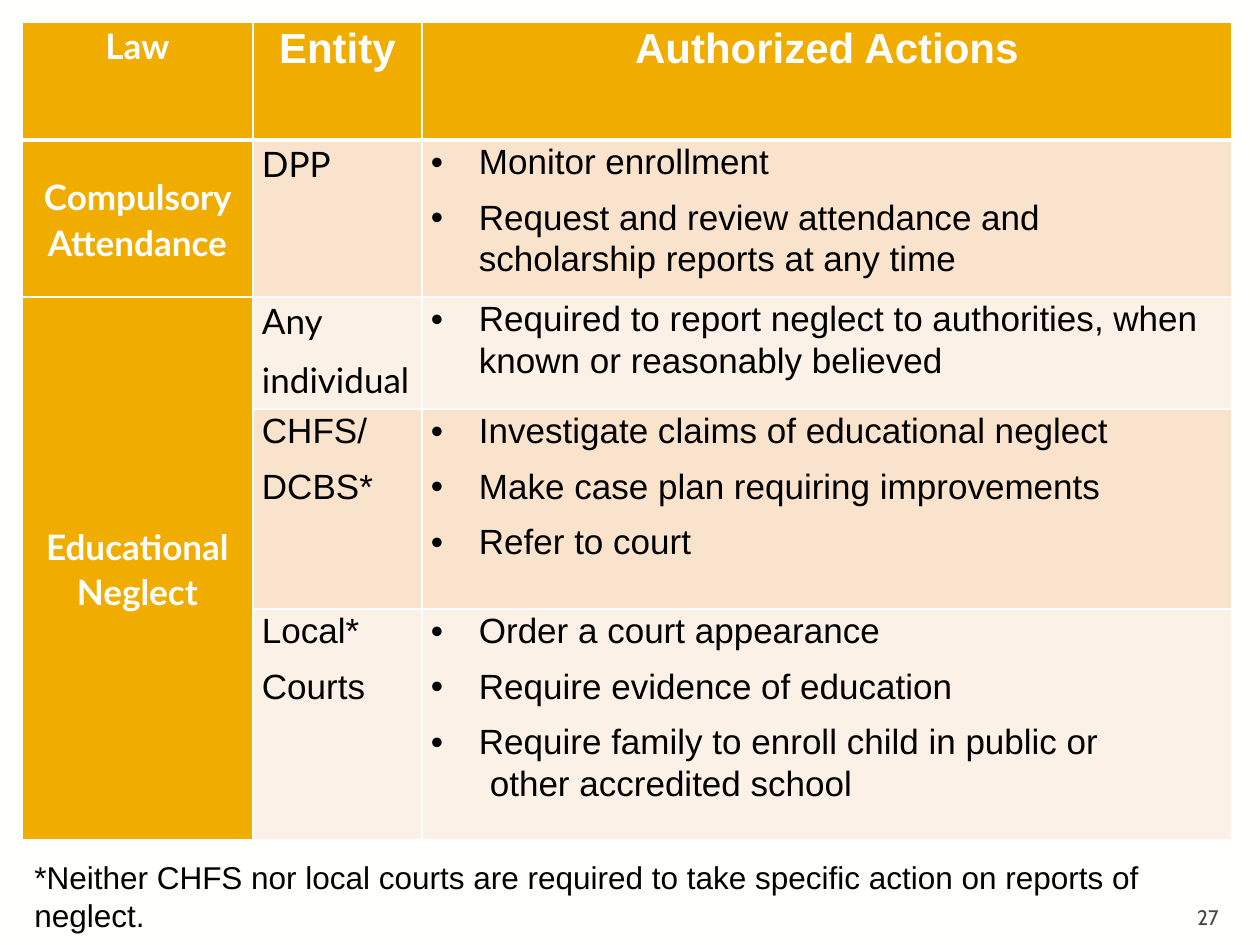
from lxml import etree
from pptx import Presentation
from pptx.dml.color import RGBColor
from pptx.enum import text
from pptx.oxml import ns
from pptx import util as u

PX = 914400 / 126
COLORS = {
    "page": "FFFFFB", "gold": "F0AD00", "peach": "F9E3CC", "cream": "FCF1E7",
    "white": "FFFFFF", "black": "000000", "grey": "454545",
}
COLUMNS = [231, 169, 810]
ROWS = [118, 157, 112, 200, 231]
HEADERS = [("Law", "Lato", 20), ("Entity", "Arial", 24),
           ("Authorized Actions", "Arial", 24)]
# Law, rows it covers
LAWS = [("Compulsory Attendance", 1), ("Educational Neglect", 3)]
# Entity lines, entity font, actions
DUTIES = [
    (["DPP"], "Lato",
     ["Monitor enrollment",
      "Request and review attendance and scholarship reports at any time"]),
    (["Any", "individual"], "Lato",
     ["Required to report neglect to authorities, when known or reasonably believed"]),
    (["CHFS/", "DCBS*"], "Arial",
     ["Investigate claims of educational neglect",
      "Make case plan requiring improvements",
      "Refer to court"]),
    (["Local*", "Courts"], "Arial",
     ["Order a court appearance",
      "Require evidence of education",
      "Require family to enroll child in public or"]),
]
CONTINUATION = "other accredited school"
HEADING = {"color": "white", "bold": True, "align": text.PP_ALIGN.CENTER}
CELL_SPACING = {"line_spacing": 1.07, "space_after": u.Pt(8)}


def emu(px):
    return u.Emu(round(px * PX))


def rgb(name):
    return RGBColor.from_string(COLORS[name])


def set_all(target, values):
    for name, value in values.items():
        setattr(target, name, value)


def write(paragraph, words, font="Arial", size=20, color="black", bold=False,
          align=text.PP_ALIGN.LEFT, spacing=None):
    set_all(paragraph, {"alignment": align, **(spacing or {})})
    run = paragraph.add_run()
    run.text = words
    set_all(run.font, {"name": font, "size": u.Pt(size), "bold": bold})
    run.font.color.rgb = rgb(color)


def indent(paragraph, left, bullet=False):
    props = paragraph._p.get_or_add_pPr()
    props.set("marL", str(emu(left)))
    if bullet:
        props.set("indent", str(-emu(left)))
        etree.SubElement(props, ns.qn("a:buFont"), typeface="Arial")
        etree.SubElement(props, ns.qn("a:buChar"), char="•")


def add_paragraph(frame, is_first):
    return frame.paragraphs[0] if is_first else frame.add_paragraph()


def fill_cell(cell, lines, fill, bullets=False, **style):
    for i, line in enumerate(lines):
        paragraph = add_paragraph(cell.text_frame, i == 0)
        write(paragraph, line, spacing=CELL_SPACING, **style)
        if bullets:
            indent(paragraph, 48, bullet=True)
    cell.fill.solid()
    cell.fill.fore_color.rgb = rgb(fill)


def prepare_cell(cell, top=1, bottom=1):
    set_all(cell, {"margin_left": emu(9), "margin_right": emu(9),
                   "margin_top": 0, "margin_bottom": 0})
    props = cell._tc.get_or_add_tcPr()
    for side, width in {"L": 1, "R": 1, "T": top, "B": bottom}.items():
        line = etree.SubElement(props, ns.qn(f"a:ln{side}"), w=str(u.Pt(width)))
        solid = etree.SubElement(line, ns.qn("a:solidFill"))
        etree.SubElement(solid, ns.qn("a:srgbClr"), val=COLORS["white"])


def add_duties_table(slide):
    table = slide.shapes.add_table(
        len(ROWS), len(COLUMNS), emu(22), emu(22),
        emu(sum(COLUMNS)), emu(sum(ROWS))).table
    for column, width in zip(table.columns, COLUMNS):
        column.width = emu(width)
    for r, height in enumerate(ROWS):
        table.rows[r].height = emu(height)
        for c in range(len(COLUMNS)):
            prepare_cell(table.cell(r, c), top=3 if r == 1 else 1,
                         bottom=3 if r == 0 else 1)

    # Header row
    for c, (title, font, size) in enumerate(HEADERS):
        fill_cell(table.cell(0, c), [title], "gold", font=font, size=size, **HEADING)

    # Laws, merged down the first column
    row = 1
    for law, count in LAWS:
        cell = table.cell(row, 0)
        if count > 1:
            cell.merge(table.cell(row + count - 1, 0))
        fill_cell(cell, [law], "gold", font="Lato", **HEADING)
        cell.vertical_anchor = text.MSO_ANCHOR.MIDDLE
        row += count

    # Entities and their actions, in banded rows
    for r, (entity, font, actions) in enumerate(DUTIES, start=1):
        band = "peach" if r % 2 else "cream"
        fill_cell(table.cell(r, 1), entity, band, font=font)
        fill_cell(table.cell(r, 2), actions, band, bullets=True)

    # Unbulleted second line of the last action
    frame = table.cell(len(DUTIES), 2).text_frame
    frame.paragraphs[-1].space_after = u.Pt(0)
    continuation = frame.add_paragraph()
    write(continuation, CONTINUATION, spacing={"line_spacing": 1.07})
    indent(continuation, 59)


def add_text(slide, box, words, anchor=text.MSO_ANCHOR.TOP, bottom=6, **style):
    frame = slide.shapes.add_textbox(*map(emu, box)).text_frame
    set_all(frame, {"word_wrap": True, "vertical_anchor": anchor,
                    "margin_bottom": emu(bottom)})
    write(frame.paragraphs[0], words, **style)


def main():
    deck = Presentation()
    set_all(deck, {"slide_width": emu(1260), "slide_height": emu(945)})
    slide = deck.slides.add_slide(deck.slide_layouts[6])
    slide.background.fill.solid()
    slide.background.fill.fore_color.rgb = rgb("page")

    add_duties_table(slide)

    # Page number and footnote
    add_text(slide, (1130, 892, 101, 38), "27", anchor=text.MSO_ANCHOR.BOTTOM,
             bottom=0, font="Cabin", size=12, color="grey",
             align=text.PP_ALIGN.RIGHT)
    add_text(slide, (22, 852, 1210, 89),
             "*Neither CHFS nor local courts are required to take specific "
             "action on reports of neglect.", size=18)
    deck.save("out.pptx")


if __name__ == "__main__":
    main()
